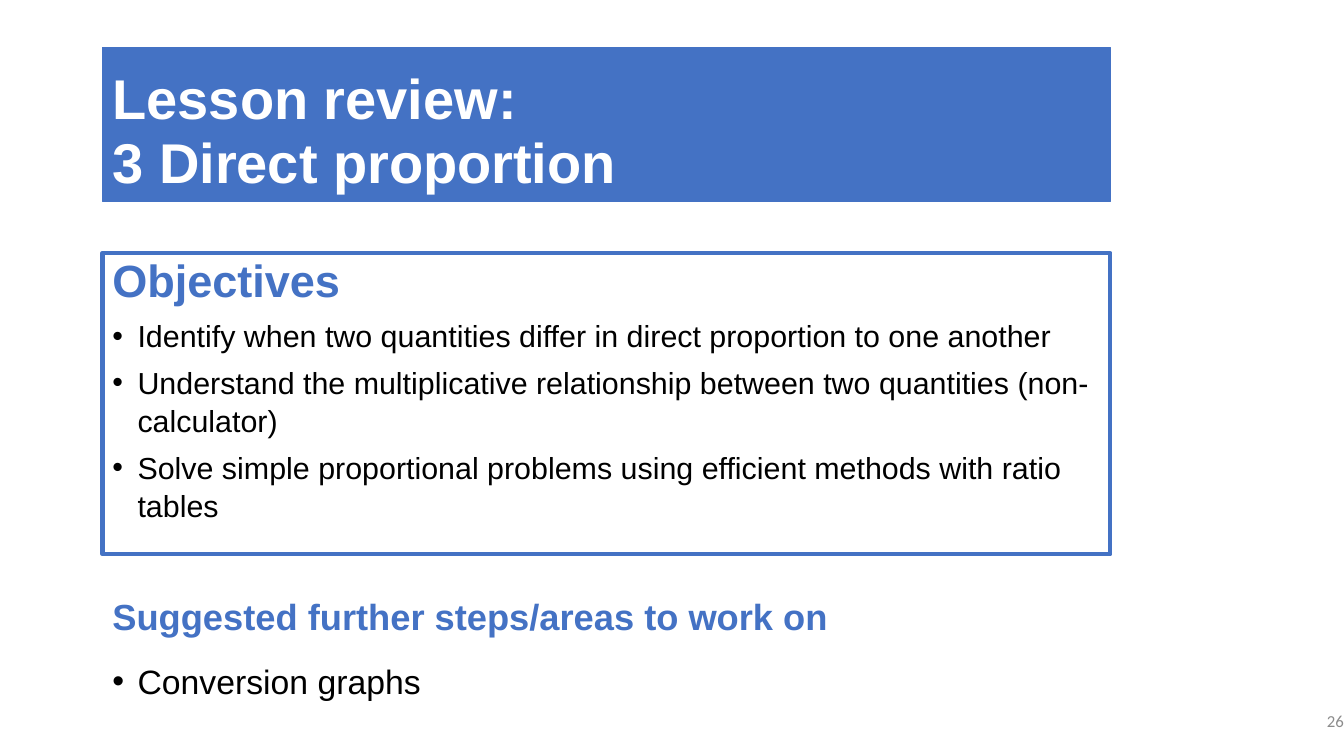
from dataclasses import dataclass

from lxml import etree
from pptx import Presentation
from pptx.dml.color import RGBColor
from pptx.enum.shapes import MSO_SHAPE
from pptx.enum.text import MSO_ANCHOR, MSO_AUTO_SIZE, PP_ALIGN
from pptx.oxml.ns import qn
from pptx.util import Pt

RECTANGLE = MSO_SHAPE.RECTANGLE
TOP, MIDDLE, BOTTOM = MSO_ANCHOR.TOP, MSO_ANCHOR.MIDDLE, MSO_ANCHOR.BOTTOM
NO_AUTOFIT = MSO_AUTO_SIZE.NONE
LEFT, RIGHT = PP_ALIGN.LEFT, PP_ALIGN.RIGHT
TITLE_ONLY = 5


@dataclass(frozen=True)
class Theme:
    accent: RGBColor = RGBColor(0x44, 0x72, 0xC4)
    body: RGBColor = RGBColor(0, 0, 0)
    light: RGBColor = RGBColor(255, 255, 255)
    muted: RGBColor = RGBColor(0x8C, 0x8C, 0x8C)
    font: str = "Arial"
    number_font: str = "Calibri"
    title_size: float = 40
    objectives_heading_size: float = 32.2
    objectives_size: float = 21.7
    steps_heading_size: float = 25.9
    steps_size: float = 24.1
    number_size: float = 12
    indent: float = 18


THEME = Theme()


def prepare_frame(shape, anchor=TOP):
    frame = shape.text_frame
    frame.word_wrap = True
    frame.auto_size = NO_AUTOFIT
    frame.vertical_anchor = anchor
    frame.margin_left = frame.margin_right = Pt(7.2)
    frame.margin_top = frame.margin_bottom = Pt(3.6)
    return frame


def add_bullet(paragraph):
    properties = paragraph._p.get_or_add_pPr()
    properties.set("marL", str(Pt(THEME.indent)))
    properties.set("indent", str(-Pt(THEME.indent)))
    font = etree.SubElement(properties, qn("a:buFont"))
    font.set("typeface", THEME.font)
    etree.SubElement(properties, qn("a:buChar")).set("char", "•")


def write(frame, text, size, color, bold=False, font=THEME.font, align=LEFT,
          line_spacing=1.0, space_before=0, bullet=False):
    first = frame.paragraphs[0]
    paragraph = frame.add_paragraph() if first.runs else first
    paragraph.text = text
    paragraph.alignment = align
    paragraph.line_spacing = line_spacing
    paragraph.space_before = Pt(space_before)
    if bullet:
        add_bullet(paragraph)
    for run in paragraph.runs:
        run.font.name = font
        run.font.size = Pt(size)
        run.font.bold = bold
        run.font.color.rgb = color


def place_title(slide, text, left, top, width, height):
    title = slide.shapes.title
    title.left, title.top = Pt(left), Pt(top)
    title.width, title.height = Pt(width), Pt(height)
    title.fill.solid()
    title.fill.fore_color.rgb = THEME.accent
    title.line.color.rgb = THEME.accent
    title.line.width = Pt(0.75)
    write(prepare_frame(title, BOTTOM), text, THEME.title_size, THEME.light,
          bold=True, line_spacing=0.95)


def add_objectives(slide, objectives, left, top, width, height):
    panel = slide.shapes.add_shape(RECTANGLE, Pt(left), Pt(top), Pt(width), Pt(height))
    panel.shadow.inherit = False
    panel.fill.background()
    panel.line.color.rgb = THEME.accent
    panel.line.width = Pt(3)
    frame = prepare_frame(panel)
    write(frame, "Objectives", THEME.objectives_heading_size, THEME.accent,
          bold=True, line_spacing=0.91)
    for objective in objectives:
        write(frame, objective, THEME.objectives_size, THEME.body,
              line_spacing=1.05, space_before=6, bullet=True)


def add_further_steps(slide, steps, left, top, width, height):
    box = slide.shapes.add_textbox(Pt(left), Pt(top), Pt(width), Pt(height))
    frame = prepare_frame(box)
    write(frame, "Suggested further steps/areas to work on", THEME.steps_heading_size,
          THEME.accent, bold=True, line_spacing=1.01)
    for step in steps:
        write(frame, step, THEME.steps_size, THEME.body,
              line_spacing=1.01, space_before=16, bullet=True)


def add_slide_number(slide, number, left, top, width, height):
    box = slide.shapes.add_textbox(Pt(left), Pt(top), Pt(width), Pt(height))
    write(prepare_frame(box, MIDDLE), number, THEME.number_size, THEME.muted,
          font=THEME.number_font, align=RIGHT)


def main():
    presentation = Presentation()
    presentation.slide_width, presentation.slide_height = Pt(960), Pt(540)
    slide = presentation.slides.add_slide(presentation.slide_layouts[TITLE_ONLY])
    left, width = 73.2, 720
    place_title(slide, "Lesson review:\v3 Direct proportion", left, 33.9, width, 110)
    add_objectives(slide, [
        "Identify when two quantities differ in direct proportion to one another",
        "Understand the multiplicative relationship between two quantities (non-calculator)",
        "Solve simple proportional problems using efficient methods with ratio tables",
    ], left, 180.7, width, 215.3)
    add_further_steps(slide, ["Conversion graphs"], left, 420.5, 752.4, 85)
    add_slide_number(slide, "26", 751, 500.5, 216, 28.8)
    presentation.save("out.pptx")


if __name__ == "__main__":
    main()
